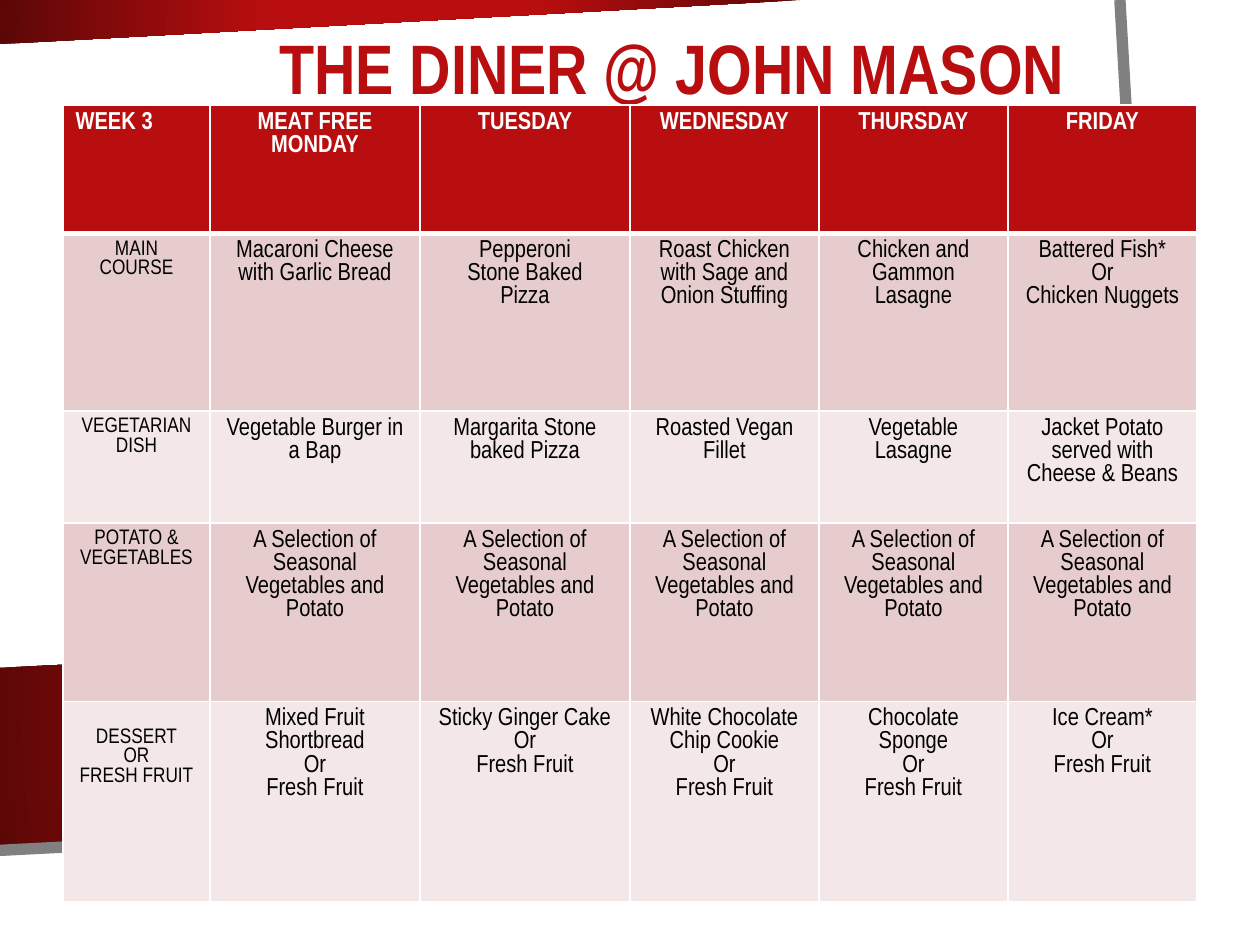
from pptx import Presentation
from pptx.dml.color import RGBColor
from pptx.enum.text import MSO_ANCHOR, PP_ALIGN
from pptx.oxml import parse_xml
from pptx.oxml.ns import nsdecls, qn
from pptx.util import Pt

RED = RGBColor(0xB8, 0x0E, 0x0F)
DARK = RGBColor(0x5C, 0x07, 0x07)
GREY = RGBColor(0x80, 0x80, 0x80)
WHITE = RGBColor(0xFF, 0xFF, 0xFF)
BLACK = RGBColor(0, 0, 0)
ROSE = RGBColor(0xE6, 0xCC, 0xCC)
PALE = RGBColor(0xF3, 0xE7, 0xE7)
FONT = "Arial Narrow"

COLS = [84, 120, 120, 108, 108, 108]
ROWS = [73.5, 101.5, 64, 102, 114.5]
SIDES = "A Selection of Seasonal Vegetables and Potato"
MENU = [
    ["WEEK 3", "MEAT FREE MONDAY", "TUESDAY", "WEDNESDAY", "THURSDAY",
     "FRIDAY"],
    ["MAIN\nCOURSE", "Macaroni Cheese with Garlic Bread",
     "Pepperoni\nStone Baked\nPizza",
     "Roast Chicken with Sage and Onion Stuffing",
     "Chicken and Gammon Lasagne",
     "Battered Fish*\nOr\nChicken Nuggets"],
    ["VEGETARIAN DISH", "Vegetable Burger in a Bap",
     "Margarita Stone baked Pizza", "Roasted Vegan Fillet",
     "Vegetable Lasagne", "Jacket Potato served with Cheese & Beans"],
    ["POTATO & VEGETABLES"] + [SIDES] * 5,
    ["DESSERT\nOR\nFRESH FRUIT"] + [
        sweet + "\nOr\nFresh Fruit" for sweet in (
            "Mixed Fruit Shortbread", "Sticky Ginger Cake",
            "White Chocolate Chip Cookie", "Chocolate\vSponge",
            "Ice Cream*")],
]


def add_path(slide, points, closed=True):
    spots = [(Pt(x), Pt(y)) for x, y in points]
    pen = slide.shapes.build_freeform(*spots[0])
    pen.add_line_segments(spots[1:], close=closed)
    shape = pen.convert_to_shape()
    shape.shadow.inherit = False
    return shape


def add_band(slide, points):
    band = add_path(slide, points)
    band.line.fill.background()
    band.fill.gradient()
    for stop, color, place in zip(band.fill.gradient_stops, (RED, DARK),
                                  (0.34, 1)):
        stop.color.rgb = color
        stop.position = place
    # Turn the linear gradient into a round one
    grad = band._element.spPr.find(qn("a:gradFill"))
    line = grad.find(qn("a:lin"))
    grad.replace(line, parse_xml(
        f'<a:path {nsdecls("a")} path="circle"><a:fillToRect l="50000" '
        't="50000" r="50000" b="50000"/></a:path>'))


def add_rule(slide, points):
    rule = add_path(slide, points, closed=False)
    rule.fill.background()
    rule.line.color.rgb = GREY
    rule.line.width = Pt(6.5)


def style(frame, size, color, bold=False, align=PP_ALIGN.CENTER):
    for para in frame.paragraphs:
        para.alignment = align
        for run in para.runs:
            font = run.font
            font.name, font.size, font.bold = FONT, Pt(size), bold
            font.color.rgb = color


def add_title(slide, text):
    box = slide.shapes.add_textbox(Pt(78), Pt(18), Pt(612), Pt(48))
    frame = box.text_frame
    frame.word_wrap = True
    frame.vertical_anchor = MSO_ANCHOR.BOTTOM
    frame.text = text
    frame.paragraphs[0].line_spacing = 0.9
    style(frame, 40, RED, bold=True)


def set_edges(cell, top, base):
    props = cell._tc.get_or_add_tcPr()
    for side, width in (("L", 1), ("R", 1), ("T", top), ("B", base)):
        props.append(parse_xml(
            f'<a:ln{side} {nsdecls("a")} w="{Pt(width)}"><a:solidFill>'
            f'<a:srgbClr val="{WHITE}"/></a:solidFill></a:ln{side}>'))


def fill_cell(cell, text, row, col):
    head = row == 0
    set_edges(cell, 3 if row == 1 else 1, 3 if head else 1)
    cell.fill.solid()
    cell.fill.fore_color.rgb = RED if head else ROSE if row % 2 else PALE
    cell.text_frame.text = text
    size = 12 if col == 0 and not head else 14
    align = PP_ALIGN.LEFT if row == col == 0 else PP_ALIGN.CENTER
    style(cell.text_frame, size, WHITE if head else BLACK, head, align)


def add_menu(slide):
    table = slide.shapes.add_table(
        len(ROWS), len(COLS), Pt(36), Pt(60), Pt(sum(COLS)),
        Pt(sum(ROWS))).table
    for col, width in zip(table.columns, COLS):
        col.width = Pt(width)
    for row, height in zip(table.rows, ROWS):
        row.height = Pt(height)
    for r, line in enumerate(MENU):
        for c, text in enumerate(line):
            fill_cell(table.cell(r, c), text, r, c)
    # Lower the dessert label by one line
    table.cell(len(ROWS) - 1, 0).margin_top = Pt(15)


def main():
    deck = Presentation()
    deck.slide_width, deck.slide_height = Pt(720), Pt(540)
    slide = deck.slides.add_slide(deck.slide_layouts[6])
    # Backdrop
    add_band(slide, [(0, 381.6), (659, 350), (666, 452), (0, 485.3)])
    add_band(slide, [(0, 0), (457.5, 0), (0, 25.2)])
    add_rule(slide, [(640, 0), (666, 451.5), (-1.5, 486)])
    # Content
    add_title(slide, "THE DINER @ JOHN MASON")
    add_menu(slide)
    deck.save("out.pptx")


if __name__ == "__main__":
    main()
